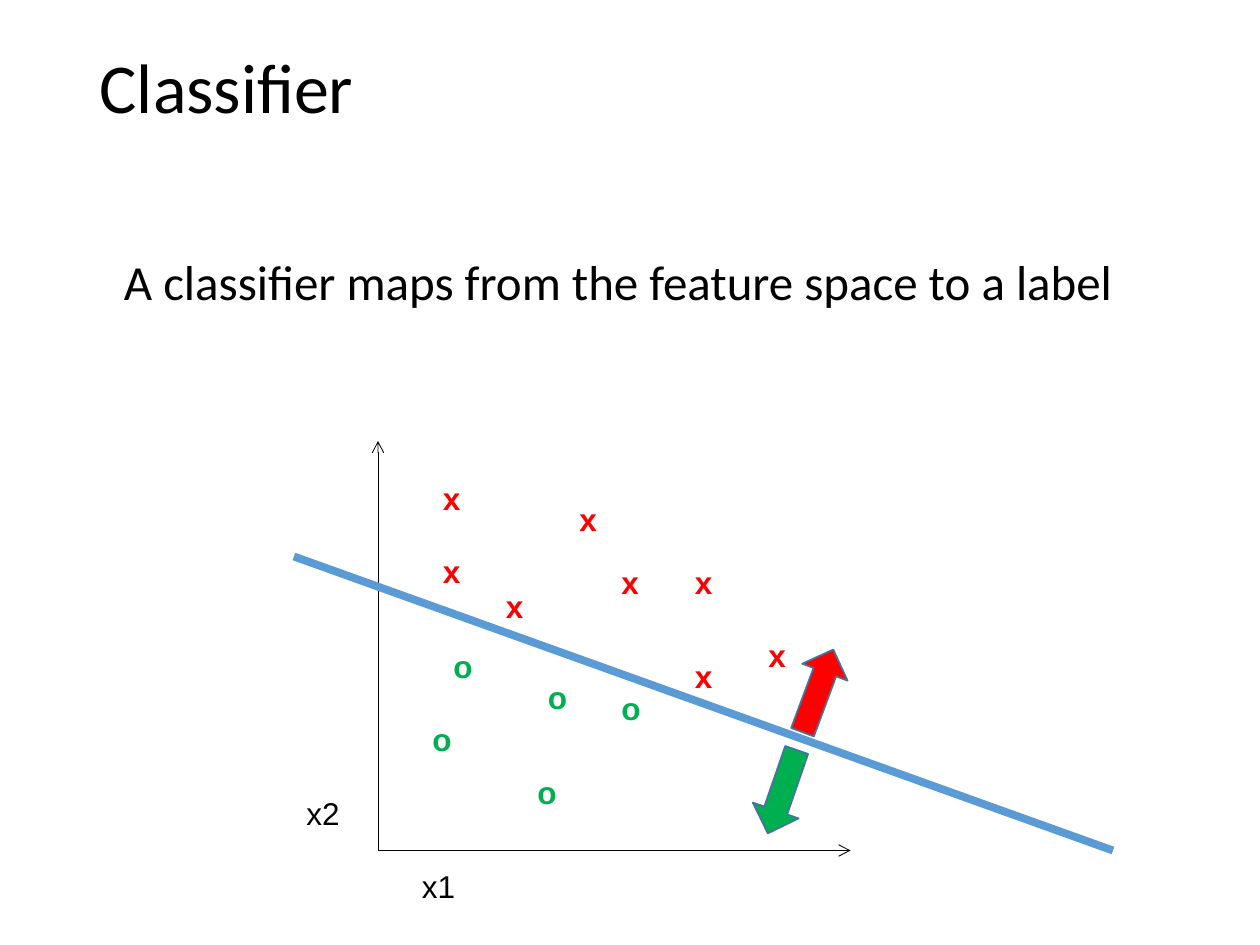
from pptx import Presentation
from pptx.dml.color import RGBColor
from pptx.enum.shapes import MSO_CONNECTOR, MSO_SHAPE
from pptx.enum.text import MSO_ANCHOR, MSO_AUTO_SIZE, PP_ALIGN
from pptx.oxml.ns import qn
from pptx.util import Pt
from lxml.etree import SubElement

PX = 7620
COLORS = {"ink": "000000", "red": "FF0000", "green": "00B050",
          "blue": "5B9BD5", "edge": "43739E"}
CROSSES = [(300, 110), (370, 110), (370, 200), (440, 180),
           (130, 30), (130, 100), (260, 50), (190, 133)]
RINGS = [(300, 230), (120, 260), (140, 190), (220, 310), (230, 220)]


def emu(*vals):
    return [v * PX for v in vals]


def tint(name):
    return RGBColor.from_string(COLORS[name])


def write(para, text, size, font, color="ink", bold=False):
    run = para.add_run()
    run.text = text
    run.font.size = Pt(size)
    run.font.name = font
    run.font.bold = bold
    run.font.color.rgb = tint(color)


def fill_holder(holder, box, text, size, anchor):
    holder.left, holder.top, holder.width, holder.height = emu(*box)
    frame = holder.text_frame
    frame.vertical_anchor = anchor
    para = frame.paragraphs[0]
    para.alignment = PP_ALIGN.LEFT
    para.line_spacing = 0.9
    write(para, text, size, "Calibri")
    return para


def add_title(slide, box):
    fill_holder(slide.shapes.title, box, "Classifier", 40, MSO_ANCHOR.MIDDLE)


def add_body(slide, box):
    para = fill_holder(slide.placeholders[1], box,
                       "A classifier maps from the feature space to a label",
                       28, MSO_ANCHOR.TOP)
    para.space_before = Pt(7.5)
    props = para._p.get_or_add_pPr()
    props.set("marL", str(23 * PX))
    props.set("indent", "0")
    SubElement(props, qn("a:buNone"))


def add_mark(shapes, x, y, wide, text, color="ink", bold=False):
    frame = shapes.add_textbox(*emu(x, y, wide, 48)).text_frame
    frame.word_wrap = False
    frame.auto_size = MSO_AUTO_SIZE.SHAPE_TO_FIT_TEXT
    write(frame.paragraphs[0], text, 18, "Arial", color, bold)


def add_line(shapes, start, end, color, width, head=False):
    line = shapes.add_connector(MSO_CONNECTOR.STRAIGHT, *emu(*start, *end))
    line.line.color.rgb = tint(color)
    line.line.width = Pt(width)
    if head:
        SubElement(line.line._get_or_add_ln(), qn("a:tailEnd"), type="arrow")
    SubElement(line._element.spPr, qn("a:effectLst"))


def add_arrow(shapes, x, y, turn, color):
    arrow = shapes.add_shape(MSO_SHAPE.RIGHT_ARROW, *emu(x, y, 84, 46))
    arrow.rotation = turn
    arrow.shadow.inherit = False
    arrow.fill.solid()
    arrow.fill.fore_color.rgb = tint(color)
    arrow.line.color.rgb = tint("edge")
    arrow.line.width = Pt(1)


def add_plot(slide, left, top):
    def at(x, y):
        return left + x, top + y

    group = slide.shapes.add_group_shape().shapes
    for text, color, wide, spots in (("x", "red", 41, CROSSES),
                                     ("o", "green", 43, RINGS)):
        for spot in spots:
            add_mark(group, *at(*spot), wide, text, color, True)
    for tip in ((80, 0), (530, 390)):
        add_line(group, at(80, 390), at(*tip), "ink", 0.5, True)
    for text, spot in (("x2", (0, 330)), ("x1", (110, 400))):
        add_mark(group, *at(*spot), 56, text)

    add_line(slide.shapes, at(0, 110), at(780, 390), "blue", 4.5)
    add_arrow(slide.shapes, *at(457, 215), 290.4, "red")
    add_arrow(slide.shapes, *at(423, 311), 109.1, "green")


def main():
    deck = Presentation()
    deck.slide_width, deck.slide_height = emu(1200, 900)
    slide = deck.slides.add_slide(deck.slide_layouts[1])
    add_title(slide, (83, 0, 1034, 174))
    add_body(slide, (83, 240, 1034, 571))
    add_plot(slide, 280, 420)
    deck.save("out.pptx")


if __name__ == "__main__":
    main()
